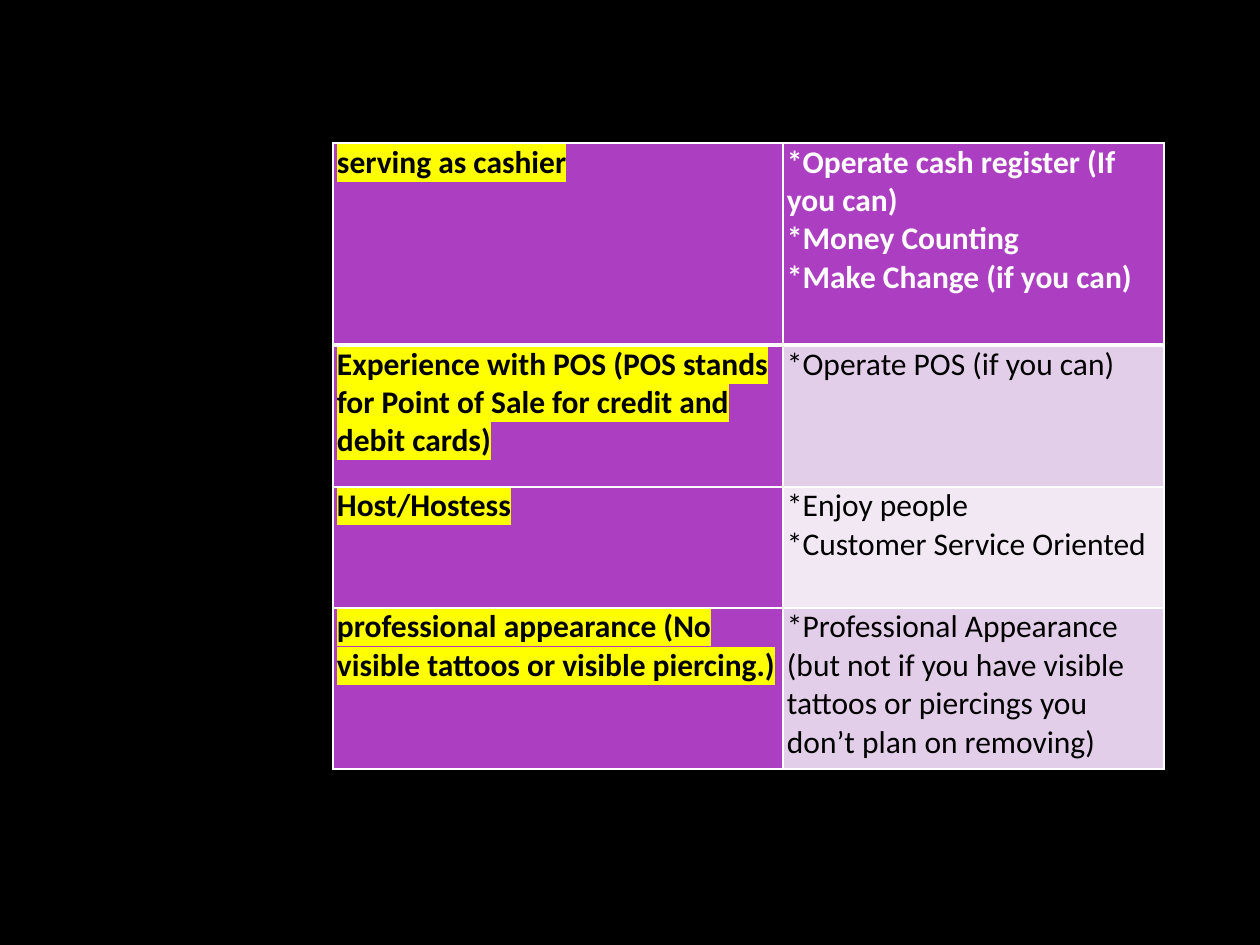
import lxml.etree
import pptx
import pptx.dml.color
import pptx.oxml.ns
import pptx.util

PX = 914400 / 126  # EMU in one px

BLACK = pptx.dml.color.RGBColor(0x00, 0x00, 0x00)
WHITE = pptx.dml.color.RGBColor(0xFF, 0xFF, 0xFF)
YELLOW = pptx.dml.color.RGBColor(0xFF, 0xFF, 0x00)
PURPLE = pptx.dml.color.RGBColor(0xAC, 0x3E, 0xC1)
LILAC = pptx.dml.color.RGBColor(0xE3, 0xCE, 0xE9)
PALE_LILAC = pptx.dml.color.RGBColor(0xF1, 0xE8, 0xF4)

COLUMN_WIDTHS = [450, 381]
# Height, job duty, matching skills
SKILL_ROWS = [
    (202, "serving as cashier",
     ["*Operate cash register (If you can)", "*Money Counting",
      "*Make Change (if you can)"]),
    (142, "Experience with POS (POS stands for Point of Sale for credit and debit cards)",
     ["*Operate POS (if you can)"]),
    (121, "Host/Hostess",
     ["*Enjoy people", "*Customer Service Oriented"]),
    (161, "professional appearance (No visible tattoos or visible piercing.)",
     ["*Professional Appearance (but not if you have visible tattoos or "
      "piercings you don’t plan on removing)"]),
]


def px(length):
    return pptx.util.Emu(round(length * PX))


def add_color(parent, tag, color):
    holder = lxml.etree.SubElement(parent, pptx.oxml.ns.qn(tag))
    lxml.etree.SubElement(holder, pptx.oxml.ns.qn("a:srgbClr"), val=str(color))
    return holder


def write_text(frame, lines, color=BLACK, bold=False, highlight=None,
               size=18, font="Calibri"):
    frame.word_wrap = True
    for index, line in enumerate(lines):
        para = frame.paragraphs[0] if index == 0 else frame.add_paragraph()
        span = para.add_run()
        span.text = line
        span.font.size = pptx.util.Pt(size)
        span.font.bold = bold
        span.font.color.rgb = color
        span.font.name = font
        if highlight is not None:
            props = span._r.get_or_add_rPr()
            mark = add_color(props, "a:highlight", highlight)
            props.find(pptx.oxml.ns.qn("a:solidFill")).addnext(mark)


def format_cell(cell, fill, top=1, bottom=1):
    cell.margin_left = cell.margin_right = px(4)
    cell.margin_top = cell.margin_bottom = 0
    cell.fill.solid()
    cell.fill.fore_color.rgb = fill
    # Borders come before the fill in the cell properties
    props = cell._tc.get_or_add_tcPr()
    borders = [("a:lnL", 1), ("a:lnR", 1), ("a:lnT", top), ("a:lnB", bottom)]
    for index, (side, points) in enumerate(borders):
        line = lxml.etree.Element(pptx.oxml.ns.qn(side),
                                  w=str(pptx.util.Pt(points)))
        add_color(line, "a:solidFill", WHITE)
        props.insert(index, line)


def add_skills_table(page, left, top):
    width = sum(COLUMN_WIDTHS)
    height = sum(row[0] for row in SKILL_ROWS)
    table = page.shapes.add_table(len(SKILL_ROWS), len(COLUMN_WIDTHS), px(left),
                                  px(top), px(width), px(height)).table
    table.horz_banding = False
    for column, column_width in zip(table.columns, COLUMN_WIDTHS):
        column.width = px(column_width)

    for index, (row_height, duty, skills) in enumerate(SKILL_ROWS):
        table.rows[index].height = px(row_height)
        is_header = index == 0
        # A thick rule parts the header from the body
        rules = {"top": 3 if index == 1 else 1, "bottom": 3 if is_header else 1}
        band = PURPLE if is_header else (LILAC if index % 2 else PALE_LILAC)

        duty_cell, skill_cell = table.cell(index, 0), table.cell(index, 1)
        format_cell(duty_cell, PURPLE, **rules)
        format_cell(skill_cell, band, **rules)
        write_text(duty_cell.text_frame, [duty], bold=True, highlight=YELLOW)
        write_text(skill_cell.text_frame, skills, bold=is_header,
                   color=WHITE if is_header else BLACK)


def main():
    deck = pptx.Presentation()
    deck.slide_width, deck.slide_height = px(1260), px(945)
    page = deck.slides.add_slide(deck.slide_layouts[6])
    page.background.fill.solid()
    page.background.fill.fore_color.rgb = BLACK
    add_skills_table(page, 333, 143)
    deck.save("out.pptx")


if __name__ == "__main__":
    main()
